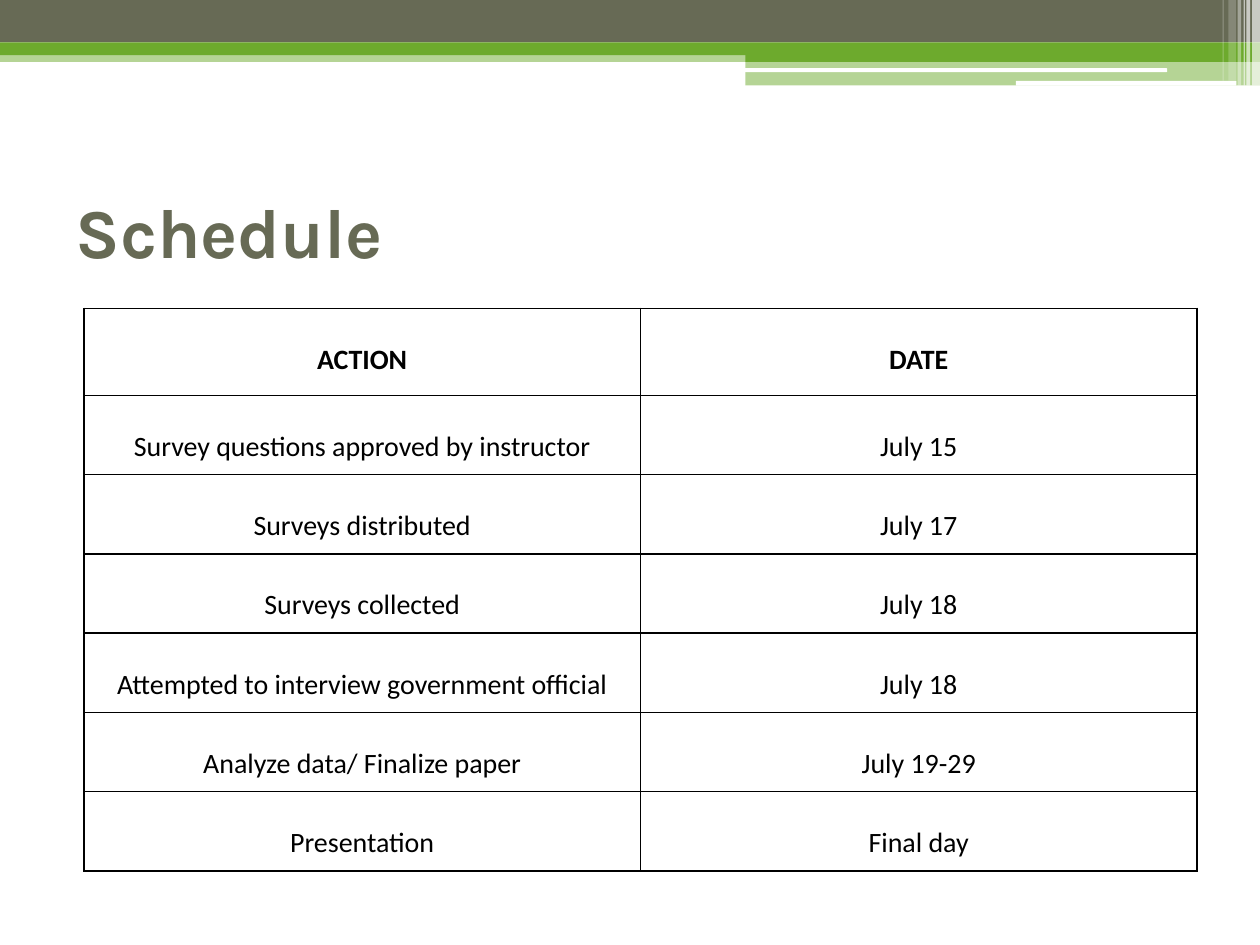
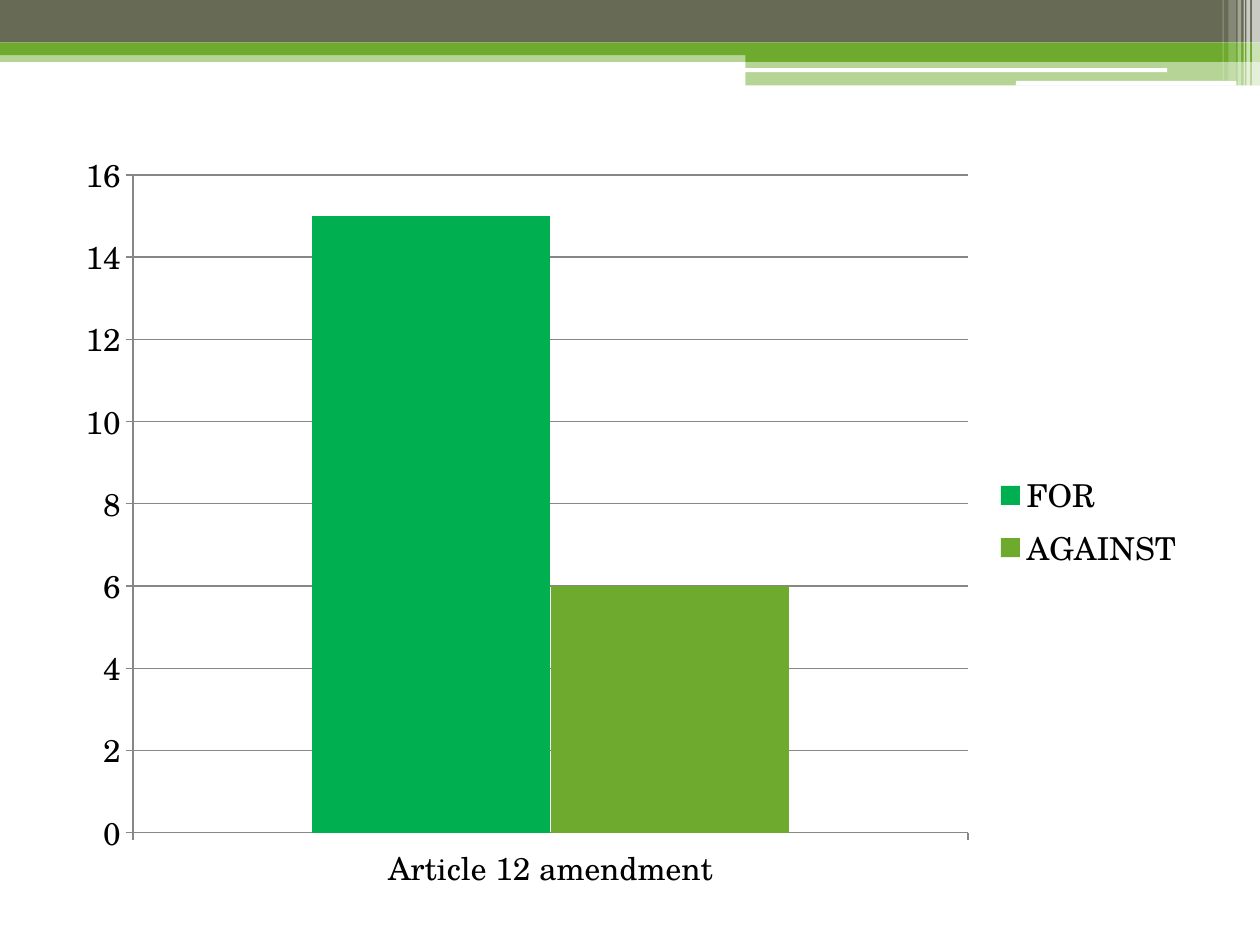
from lxml.etree import SubElement
from pptx import Presentation
from pptx.chart.data import CategoryChartData
from pptx.dml.color import RGBColor
from pptx.enum.chart import XL_CHART_TYPE as ChartType
from pptx.enum.chart import XL_LEGEND_POSITION as LegendPosition
from pptx.enum.chart import XL_TICK_MARK as TickMark
from pptx.enum.shapes import MSO_SHAPE as Shape
from pptx.enum.text import MSO_ANCHOR as Anchor
from pptx.enum.text import PP_ALIGN as Align
from pptx.oxml.ns import qn
from pptx.util import Pt

COLOURS = {
    "olive": "676A55",
    "green": "6DAA2D",
    "emerald": "00B050",
    "white": "FFFFFF",
    "black": "000000",
    "grey": "878787",
}
TITLE_FONT, TABLE_FONT, CHART_FONT = "Karla", "Calibri", "TeX Gyre Schola"
TITLE_ONLY, BLANK = 5, 6
WIDTH, HEIGHT = 720, 540

BANDS = [
    (0, 28.8, WIDTH, 6.6, "green", 50),
    (0, 0, WIDTH, 24.3, "olive", 100),
    (0, 24.3, WIDTH, 7.2, "green", 100),
    (426, 28.2, 294, 7.2, "green", 100),
    (426, 35.4, 294, 13.4, "green", 50),
]
WHITE_LINES = [(425.5, 39, 241.5, 2.2), (580.5, 46.2, 126, 2.7)]
STRIPES = [
    (715.5, 4.5, 48.9, 65),
    (712.3, 2.1, 48.9, 65),
    (710.7, 0.7, 48.9, 60),
    (707.2, 2.1, 48.9, 40),
    (702, 4.3, 46.1, 20),
    (698.6, 0.7, 46.1, 30),
]

SCHEDULE = [
    ("ACTION", "DATE"),
    ("Survey questions approved by instructor", "July 15"),
    ("Surveys distributed", "July 17"),
    ("Surveys collected", "July 18"),
    ("Attempted to interview government official", "July 18"),
    ("Analyze data/ Finalize paper", "July 19-29"),
    ("Presentation", "Final day"),
]
VOTES = [("FOR", 15, "emerald"), ("AGAINST", 6, "green")]


def colour(name):
    return RGBColor.from_string(COLOURS[name])


def points(box):
    return [Pt(length) for length in box]


def style_font(font, name, size, colour_name, bold=False):
    font.name, font.size, font.bold = name, Pt(size), bold
    font.color.rgb = colour(colour_name)


def add_block(page, box, fill, opacity=100, kind=Shape.RECTANGLE):
    block = page.shapes.add_shape(kind, *points(box))
    block.shadow.inherit = False
    block.fill.solid()
    block.fill.fore_color.rgb = colour(fill)
    block.line.fill.background()
    if opacity < 100:
        tint = block.element.spPr.find(qn("a:solidFill"))[0]
        SubElement(tint, qn("a:alpha"), val=str(opacity * 1000))
    return block


def add_header(page, master):
    blocks = [add_block(page, band[:4], *band[4:]) for band in BANDS]
    for box in WHITE_LINES:
        blocks.append(add_block(page, box, "white", kind=Shape.ROUNDED_RECTANGLE))
    for left, width, height, opacity in STRIPES:
        blocks.append(add_block(page, (left, 0, width, height), "white", opacity))
    for block in blocks:
        master.shapes.element.append(block.element)


def add_title(page, box, text):
    title = page.shapes.title
    title.left, title.top, title.width, title.height = points(box)
    frame = title.text_frame
    frame.text = text
    frame.vertical_anchor = Anchor.MIDDLE
    para = frame.paragraphs[0]
    para.alignment = Align.LEFT
    style_font(para.runs[0].font, TITLE_FONT, 40, "olive", True)


def add_borders(cell):
    properties = cell._tc.get_or_add_tcPr()
    for side in ("lnL", "lnR", "lnT", "lnB"):
        line = SubElement(properties, qn(f"a:{side}"), w=str(Pt(1)))
        fill = SubElement(line, qn("a:solidFill"))
        SubElement(fill, qn("a:srgbClr"), val=COLOURS["black"])


def fill_cell(cell, text, bold):
    add_borders(cell)
    cell.fill.background()
    cell.margin_left = cell.margin_right = Pt(5)
    cell.margin_top = cell.margin_bottom = 0
    cell.text_frame.text = text
    para = cell.text_frame.paragraphs[0]
    para.alignment = Align.CENTER
    para.line_spacing = 2.0
    style_font(para.runs[0].font, TABLE_FONT, 16, "black", bold)


def add_schedule(page, box, rows):
    header_height = 49.7
    table = page.shapes.add_table(len(rows), len(rows[0]), *points(box)).table
    table.first_row = table.horz_banding = False
    for column in table.columns:
        column.width = Pt(box[2] / len(rows[0]))
    for index, texts in enumerate(rows):
        body_height = (box[3] - header_height) / (len(rows) - 1)
        table.rows[index].height = Pt(body_height if index else header_height)
        for column, text in enumerate(texts):
            fill_cell(table.cell(index, column), text, index == 0)


def style_axis(axis):
    axis.major_tick_mark = TickMark.OUTSIDE
    axis.minor_tick_mark = TickMark.NONE
    axis.format.line.color.rgb = colour("grey")


def add_votes_chart(page, box, votes):
    data = CategoryChartData()
    data.categories = ["Article 12 amendment"]
    for name, count, _ in votes:
        data.add_series(name, [count])
    chart = page.shapes.add_chart(
        ChartType.COLUMN_CLUSTERED, *points(box), data).chart
    style_font(chart.font, CHART_FONT, 18, "black")
    chart.has_title = False
    chart.has_legend = True
    chart.legend.position = LegendPosition.RIGHT
    chart.legend.include_in_layout = False
    style_axis(chart.category_axis)
    style_axis(chart.value_axis)
    scale = chart.value_axis
    scale.minimum_scale, scale.maximum_scale, scale.major_unit = 0, 16, 2
    scale.has_major_gridlines = True
    scale.major_gridlines.format.line.color.rgb = colour("grey")
    plot = chart.plots[0]
    plot.vary_by_categories = False
    plot.gap_width, plot.overlap = 150, 0
    for series, (_, _, fill) in zip(plot.series, votes):
        series.format.fill.solid()
        series.format.fill.fore_color.rgb = colour(fill)


def main():
    deck = Presentation()
    deck.slide_width, deck.slide_height = Pt(WIDTH), Pt(HEIGHT)

    schedule_page = deck.slides.add_slide(deck.slide_layouts[TITLE_ONLY])
    add_header(schedule_page, deck.slide_master)
    add_title(schedule_page, (36, 90, 648, 84), "Schedule")
    add_schedule(schedule_page, (48, 176.2, 636, 321.6), SCHEDULE)

    votes_page = deck.slides.add_slide(deck.slide_layouts[BLANK])
    add_votes_chart(votes_page, (36, 78, 648, 440), VOTES)

    deck.save("out.pptx")


if __name__ == "__main__":
    main()
